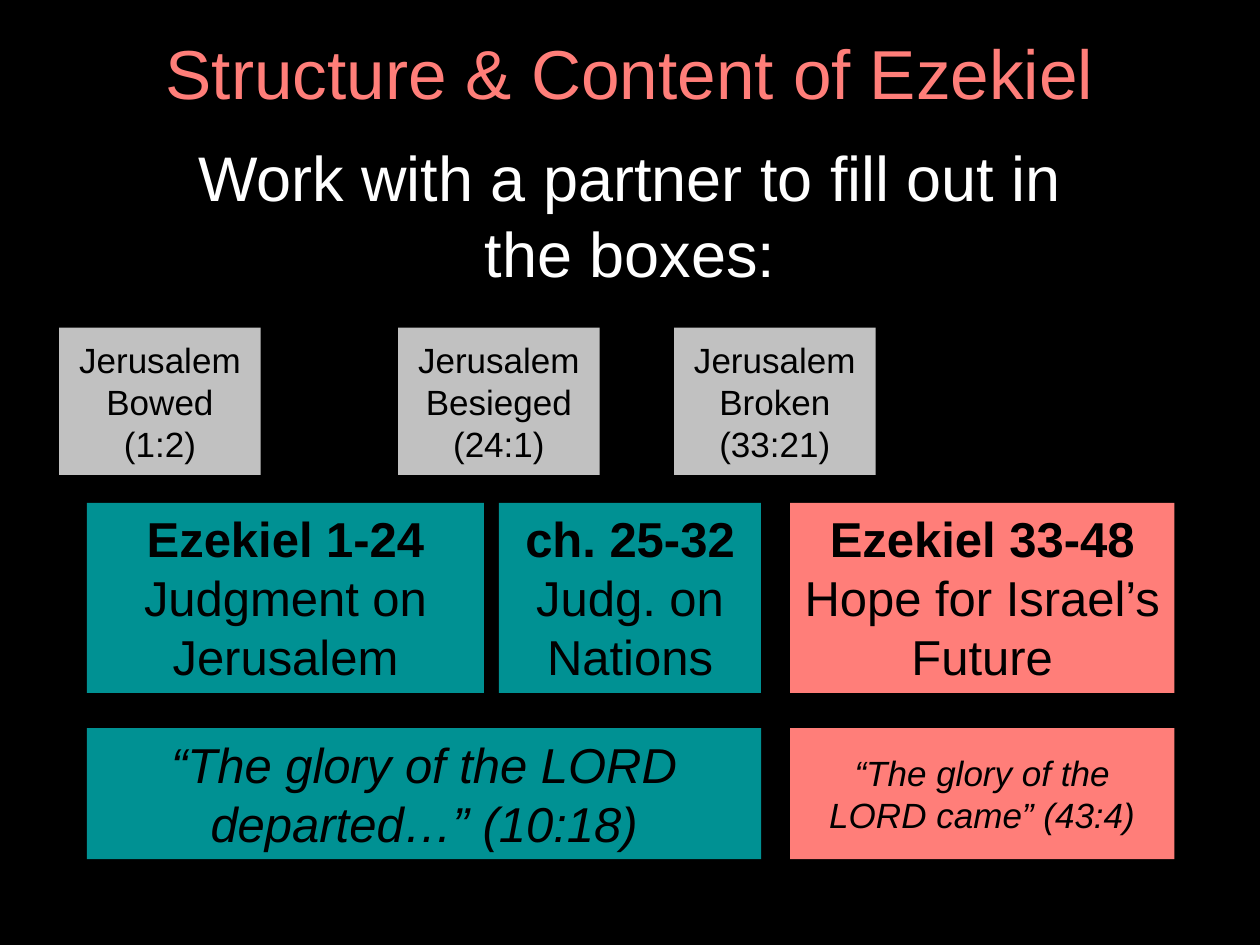
import dataclasses

import pptx
import pptx.dml.color
import pptx.enum.shapes
import pptx.enum.text
import pptx.util

Inches = pptx.util.Inches
ANCHOR = pptx.enum.text.MSO_ANCHOR
FIT = pptx.enum.text.MSO_AUTO_SIZE


@dataclasses.dataclass(frozen=True)
class Theme:
    font: str = "Arial"
    background: str = "000000"
    dark: str = "000000"
    light: str = "FFFFFF"
    hope: str = "FF7E79"
    judgment: str = "009193"
    event: str = "C1C1C1"
    title_size: float = 39.6
    prompt_size: float = 36
    section_size: float = 28
    small_size: float = 20


class SlideBuilder:
    def __init__(self, slide, theme):
        self.s = slide
        self.theme = theme
        self.paint(slide.background.fill, theme.background)

    def paint(self, fill, color):
        fill.solid()
        fill.fore_color.rgb = pptx.dml.color.RGBColor.from_string(color)

    def add_lines(self, tf, lines, size, color, anchor, bold_first=False, italic=False):
        """Add one centred paragraph per line."""
        tf.word_wrap = True
        tf.vertical_anchor = anchor
        for i, line in enumerate(lines):
            p = tf.paragraphs[0] if i == 0 else tf.add_paragraph()
            p.alignment = pptx.enum.text.PP_ALIGN.CENTER
            r = p.add_run()
            r.text = line
            r.font.name = self.theme.font
            r.font.size = pptx.util.Pt(size)
            r.font.bold = bold_first and i == 0
            r.font.italic = italic
            r.font.color.rgb = pptx.dml.color.RGBColor.from_string(color)

    def title(self, text, left, top, width, height):
        sp = self.s.shapes.title
        sp.left, sp.top = Inches(left), Inches(top)
        sp.width, sp.height = Inches(width), Inches(height)
        tf = sp.text_frame
        tf.auto_size = FIT.NONE
        self.add_lines(tf, [text], self.theme.title_size, self.theme.hope, ANCHOR.MIDDLE)
        tf.paragraphs[0].line_spacing = 0.9

    def prompt(self, text, left, top, width, height):
        sp = self.s.shapes.add_textbox(
            Inches(left), Inches(top), Inches(width), Inches(height))
        self.add_lines(sp.text_frame, [text], self.theme.prompt_size,
                       self.theme.light, ANCHOR.TOP)
        sp.text_frame.auto_size = FIT.SHAPE_TO_FIT_TEXT

    def box(self, lines, left, top, width, height, fill, size,
            anchor=ANCHOR.TOP, grow=True, **style):
        sp = self.s.shapes.add_shape(
            pptx.enum.shapes.MSO_SHAPE.RECTANGLE,
            Inches(left), Inches(top), Inches(width), Inches(height))
        sp.shadow.inherit = False
        self.paint(sp.fill, fill)
        sp.line.fill.background()
        self.add_lines(sp.text_frame, lines, size, self.theme.dark, anchor, **style)
        sp.text_frame.auto_size = FIT.SHAPE_TO_FIT_TEXT if grow else FIT.NONE


def main():
    prs = pptx.Presentation()
    prs.slide_width, prs.slide_height = Inches(10), Inches(7.5)
    theme = Theme()
    s = SlideBuilder(prs.slides.add_slide(prs.slide_layouts[5]), theme)

    # Heading and task
    s.title("Structure & Content of Ezekiel", 0.69, 0.16, 8.62, 0.9)
    s.prompt("Work with a partner to fill out in the boxes:", 1.32, 1.05, 7.36, 1.31)

    # Sections of the book
    sections = [
        (0.69, 3.15, theme.judgment, "Ezekiel 1-24", "Judgment on Jerusalem"),
        (3.96, 2.08, theme.judgment, "ch. 25-32", "Judg. on Nations"),
        (6.27, 3.05, theme.hope, "Ezekiel 33-48", "Hope for Israel’s Future"),
    ]
    for left, width, fill, chapters, topic in sections:
        s.box([chapters, topic], left, 3.99, width, 1.51, fill,
              theme.section_size, bold_first=True)

    # Events that open each section
    events = [
        (5.35, "Jerusalem Broken", "(33:21)"),
        (3.16, "Jerusalem Besieged", "(24:1)"),
        (0.47, "Jerusalem Bowed", "(1:2)"),
    ]
    for left, event, verse in events:
        s.box([event, verse], left, 2.6, 1.6, 1.17, theme.event,
              theme.small_size, ANCHOR.MIDDLE, grow=False)

    # Key verses
    verses = [
        (0.69, 5.35, theme.judgment, theme.section_size, ANCHOR.TOP,
         "“The glory of the LORD departed…” (10:18)"),
        (6.27, 3.05, theme.hope, theme.small_size, ANCHOR.MIDDLE,
         "“The glory of the LORD came” (43:4)"),
    ]
    for left, width, fill, size, anchor, verse in verses:
        # The smaller verse keeps the height of the larger one
        s.box([verse], left, 5.78, width, 1.04, fill, size, anchor,
              grow=anchor == ANCHOR.TOP, italic=True)

    prs.save("out.pptx")


if __name__ == "__main__":
    main()
